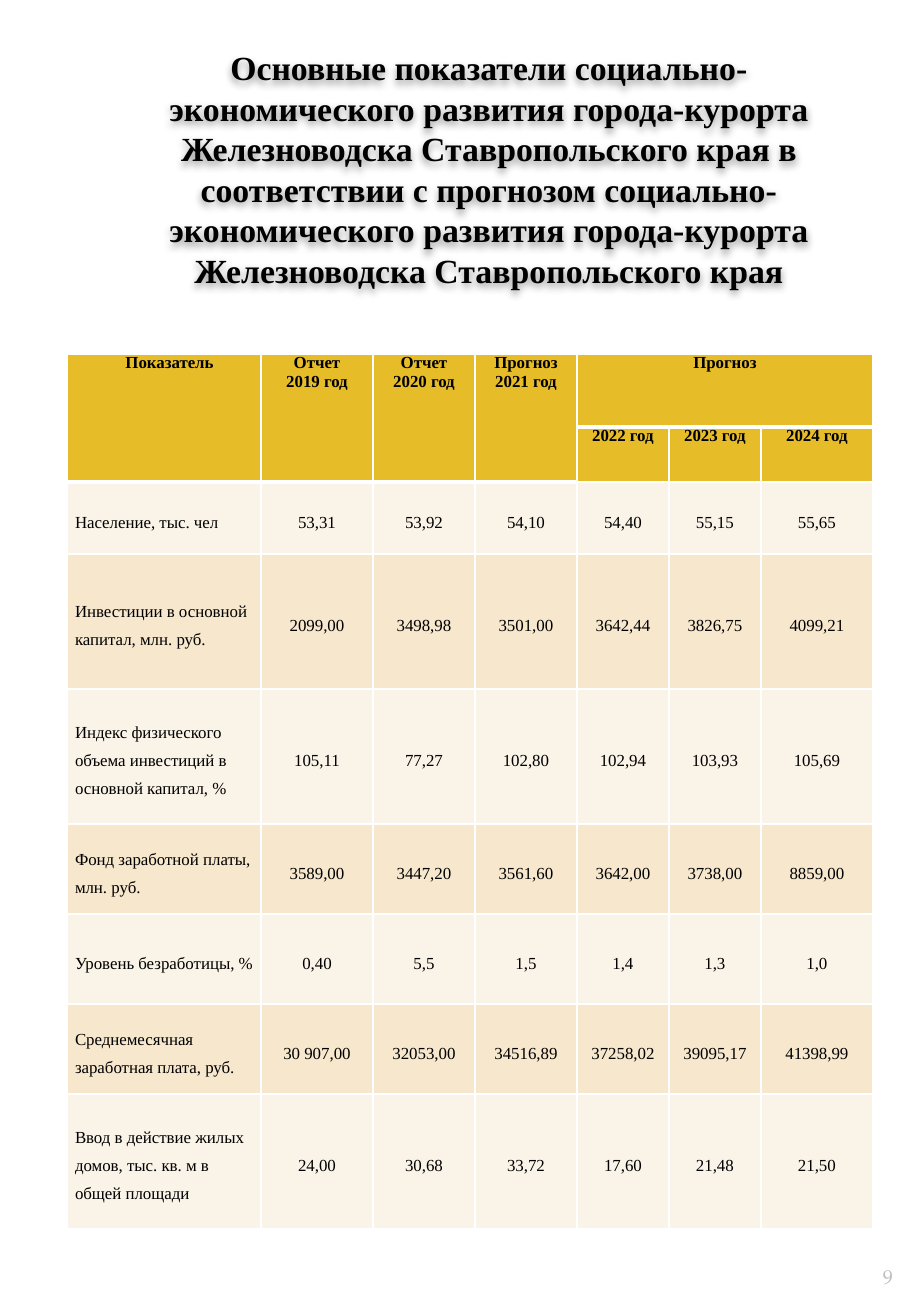
from lxml import etree
from pptx import Presentation
from pptx.dml.color import RGBColor
from pptx.enum.text import MSO_ANCHOR, MSO_AUTO_SIZE, PP_ALIGN
from pptx.oxml import parse_xml
from pptx.util import Pt

PX = 7526
TOP, MIDDLE, BOTTOM = MSO_ANCHOR.TOP, MSO_ANCHOR.MIDDLE, MSO_ANCHOR.BOTTOM
LEFT, CENTER, RIGHT = PP_ALIGN.LEFT, PP_ALIGN.CENTER, PP_ALIGN.RIGHT
NO_AUTOFIT = MSO_AUTO_SIZE.NONE
COLORS = {"text": "000000", "number": "BFBFBF", "header": "E7BC29",
          "light": "FAF3E8", "dark": "F6E7CD", "border": "FFFFFF"}
SERIF = "Times New Roman"
NAMESPACE = "http://schemas.openxmlformats.org/drawingml/2006/main"


def style_text(frame, size, color, align, font=SERIF, bold=False, spacing=None):
    for para in frame.paragraphs:
        para.alignment = align
        para.line_spacing = spacing
        for span in para.runs:
            span.font.name = font
            span.font.size = Pt(size)
            span.font.bold = bold
            span.font.color.rgb = RGBColor.from_string(COLORS[color])


def fill_cell(cell, text, color, align, anchor, bold, spacing, bottom):
    cell.text_frame.text = text
    style_text(cell.text_frame, 10, "text", align, bold=bold, spacing=spacing)
    cell.vertical_anchor = anchor
    cell.margin_left = cell.margin_right = 8 * PX
    cell.margin_top = cell.margin_bottom = 0
    properties = cell._tc.get_or_add_tcPr()
    for side, width in (("lnL", 1), ("lnR", 1), ("lnT", 1), ("lnB", bottom)):
        properties.append(parse_xml(
            f'<a:{side} xmlns:a="{NAMESPACE}" w="{Pt(width)}"><a:solidFill>'
            f'<a:srgbClr val="{COLORS["border"]}"/></a:solidFill></a:{side}>'))
    cell.fill.solid()
    cell.fill.fore_color.rgb = RGBColor.from_string(COLORS[color])


deck = Presentation()
deck.slide_width, deck.slide_height = 911 * PX, 1316 * PX
page = deck.slides.add_slide(deck.slide_layouts[5])

title = page.shapes.title
title.left, title.top, title.width, title.height = 67 * PX, 0, 844 * PX, 1266 * PX
frame = title.text_frame
frame.text = ("Основные показатели социально-экономического развития "
              "города-курорта Железноводска Ставропольского края в соответствии "
              "с прогнозом социально-экономического развития города-курорта "
              "Железноводска Ставропольского края")
frame.word_wrap = True
frame.auto_size = NO_AUTOFIT
frame.vertical_anchor = TOP
frame.margin_left = frame.margin_right = 53 * PX
frame.margin_top = frame.margin_bottom = 47 * PX
style_text(frame, 20, "text", CENTER, bold=True, spacing=Pt(24))
title.fill.background()
effects = etree.SubElement(title._element.spPr, f"{{{NAMESPACE}}}effectLst")
effects.append(parse_xml(
    f'<a:outerShdw xmlns:a="{NAMESPACE}" blurRad="{Pt(4)}" dist="{Pt(3)}" '
    'dir="5400000" rotWithShape="0"><a:srgbClr val="000000">'
    '<a:alpha val="40000"/></a:srgbClr></a:outerShdw>'))

number_box = page.shapes.add_textbox(841 * PX, 1219 * PX, 52 * PX, 70 * PX)
frame = number_box.text_frame
frame.text = "9"
frame.word_wrap = True
frame.vertical_anchor = BOTTOM
frame.margin_left = frame.margin_right = frame.margin_top = frame.margin_bottom = 0
style_text(frame, 12, "number", RIGHT, font="TeX Gyre Pagella")

column_widths = [194, 112, 102, 102, 92, 92, 112]
row_heights = [73, 55, 72, 135, 135, 90, 90, 90, 135]
headings = ["Показатель", "Отчет\n2019 год", "Отчет\n2020 год",
            "Прогноз\n2021 год", "Прогноз"]
forecast_years = ["2022 год", "2023 год", "2024 год"]
indicators = [
    ["Население, тыс. чел",
     "53,31", "53,92", "54,10", "54,40", "55,15", "55,65"],
    ["Инвестиции в основной капитал, млн. руб.",
     "2099,00", "3498,98", "3501,00", "3642,44", "3826,75", "4099,21"],
    ["Индекс физического объема инвестиций в основной капитал, %",
     "105,11", "77,27", "102,80", "102,94", "103,93", "105,69"],
    ["Фонд заработной платы, млн. руб.",
     "3589,00", "3447,20", "3561,60", "3642,00", "3738,00", "8859,00"],
    ["Уровень безработицы, %",
     "0,40", "5,5", "1,5", "1,4", "1,3", "1,0"],
    ["Среднемесячная заработная плата, руб.",
     "30 907,00", "32053,00", "34516,89", "37258,02", "39095,17", "41398,99"],
    ["Ввод в действие жилых домов, тыс. кв. м в общей площади",
     "24,00", "30,68", "33,72", "17,60", "21,48", "21,50"],
]

table = page.shapes.add_table(
    len(row_heights), len(column_widths), 67 * PX, 354 * PX,
    sum(column_widths) * PX, sum(row_heights) * PX).table
for column, width in zip(table.columns, column_widths):
    column.width = width * PX
for row, height in zip(table.rows, row_heights):
    row.height = height * PX

for index in range(4):
    table.cell(0, index).merge(table.cell(1, index))
table.cell(0, 4).merge(table.cell(0, 6))
for index, heading in enumerate(headings):
    fill_cell(table.cell(0, index), heading, "header", CENTER, TOP, True, None, 3)
for index, year in enumerate(forecast_years, 4):
    fill_cell(table.cell(1, index), year, "header", CENTER, TOP, True, None, 1)
first_heading = table.cell(0, 0).text_frame.paragraphs[0]
first_heading._p.get_or_add_pPr().set("indent", str(11 * PX))

for row_index, values in enumerate(indicators, 2):
    color = "dark" if row_index % 2 else "light"
    for index, value in enumerate(values):
        align = CENTER if index else LEFT
        fill_cell(table.cell(row_index, index), value, color, align, MIDDLE, False, 1.5, 1)

deck.save("out.pptx")
